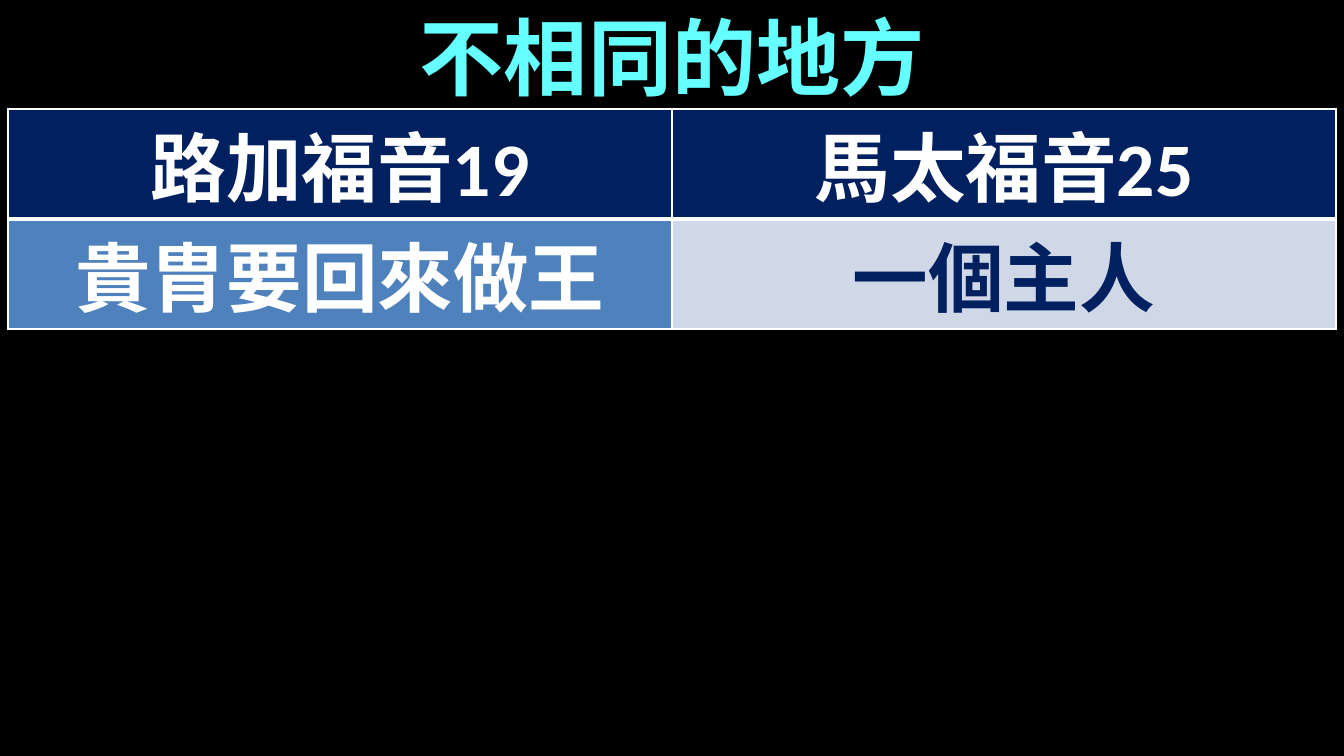
from lxml.etree import SubElement
from pptx import Presentation
from pptx.dml.color import RGBColor
from pptx.enum.text import MSO_ANCHOR as Anchor, MSO_AUTO_SIZE as AutoSize, PP_ALIGN as Align
from pptx.oxml.ns import qn
from pptx.util import Pt

# Content
HEADING = "不相同的地方"
GOSPELS = [  # rows of (text, text colour, fill)
    [("路加福音19", "FFFFFF", "002060"), ("馬太福音25", "FFFFFF", "002060")],
    [("貴胄要回來做王", "FFFFFF", "4F81BD"), ("一個主人", "002060", "D0D8E8")],
]
BORDER = "FFFFFF"
CJK_FONT = "Noto Sans CJK SC"

# Layout in px
SLIDE_W, SLIDE_H = 1344, 756
HEADING_H = 112
MARGIN, TABLE_TOP, ROW_H = 8, 109, 110
CELL_INSET = 7


def px(n):
    return round(n * 914400 / 100.8)


def color(hex_code):
    return RGBColor.from_string(hex_code)


def write(frame, text, size, fill, font):
    paragraph = frame.paragraphs[0]
    paragraph.alignment = Align.CENTER
    run = paragraph.add_run()
    run.text = text
    run.font.size, run.font.bold, run.font.name = Pt(size), True, font
    run.font.color.rgb = color(fill)
    SubElement(run.font._element, qn("a:ea"), typeface=CJK_FONT)


def add_borders(cell, widths):
    """Put a line on each side; lines precede the fill in the cell properties."""
    properties = cell._tc.get_or_add_tcPr()
    for position, (side, width) in enumerate(widths.items()):
        line = SubElement(properties, qn(f"a:ln{side}"), w=str(Pt(width)))
        solid = SubElement(line, qn("a:solidFill"))
        SubElement(solid, qn("a:srgbClr"), val=BORDER)
        properties.insert(position, line)


deck = Presentation()
deck.slide_width, deck.slide_height = px(SLIDE_W), px(SLIDE_H)
slide = deck.slides.add_slide(deck.slide_layouts[5])
slide.background.fill.solid()
slide.background.fill.fore_color.rgb = color("000000")

# Comparison table
row_count, column_count = len(GOSPELS), len(GOSPELS[0])
comparison = slide.shapes.add_table(
    row_count, column_count, px(MARGIN), px(TABLE_TOP),
    px(SLIDE_W - 2 * MARGIN), px(ROW_H * row_count)).table
for r, gospel_row in enumerate(GOSPELS):
    for c, (text, text_color, fill) in enumerate(gospel_row):
        cell = comparison.cell(r, c)
        cell.margin_left = cell.margin_right = px(CELL_INSET)
        cell.margin_top = cell.margin_bottom = 0
        cell.vertical_anchor = Anchor.TOP
        cell.fill.solid()
        cell.fill.fore_color.rgb = color(fill)
        header_edge = {"B": 3} if r == 0 else {"T": 3}
        add_borders(cell, {"L": 1, "R": 1, "T": 1, "B": 1} | header_edge)
        write(cell.text_frame, text, size=54, fill=text_color, font="Calibri")

# Heading
heading = slide.shapes.title
heading.left, heading.top, heading.width, heading.height = 0, 0, px(SLIDE_W), px(HEADING_H)
heading.text_frame.auto_size = AutoSize.NONE
heading.text_frame.vertical_anchor = Anchor.MIDDLE
write(heading.text_frame, HEADING, size=60, fill="66FFFF", font=CJK_FONT)

deck.save("out.pptx")
